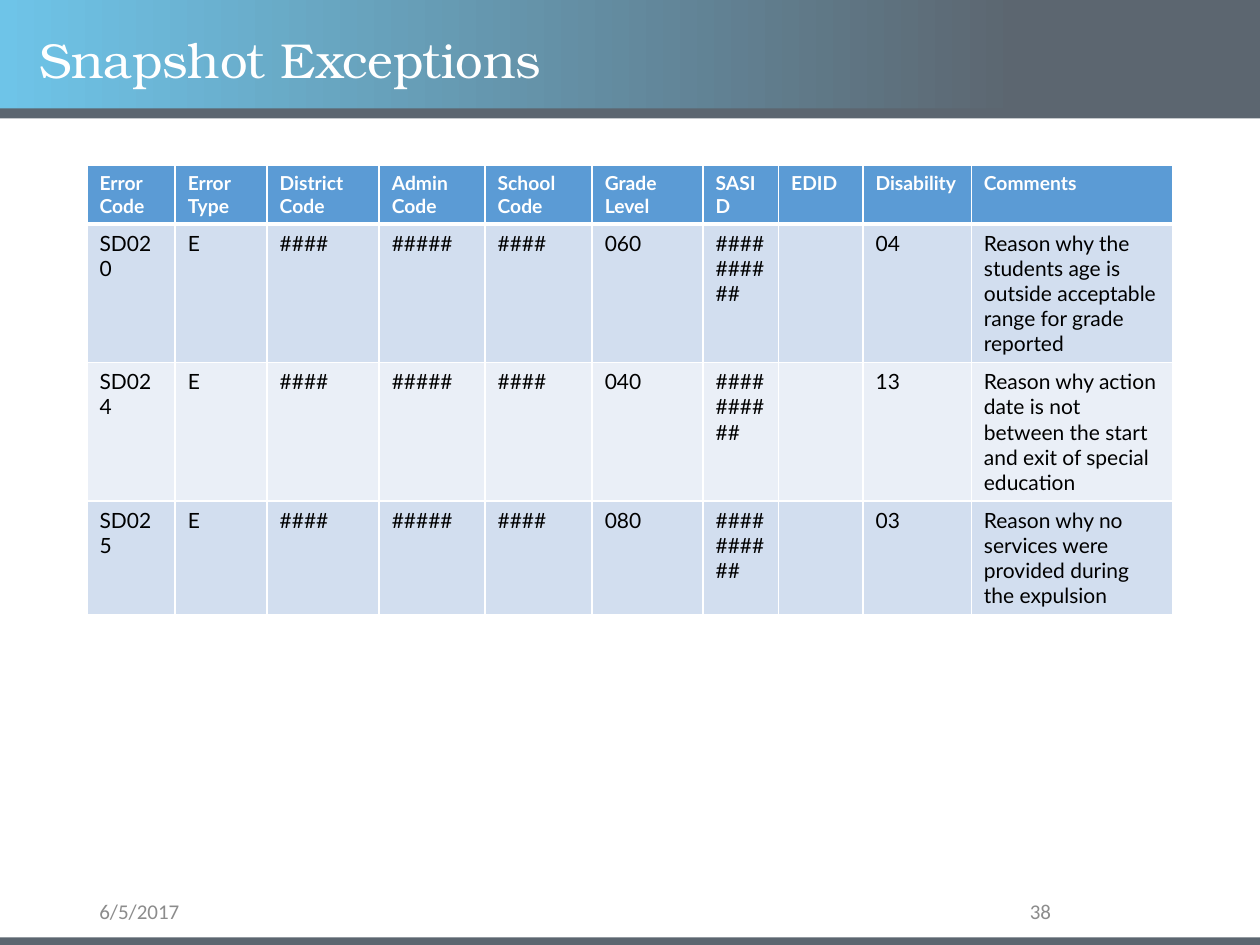
import pptx
import pptx.dml.color
import pptx.enum.shapes
import pptx.enum.text
import pptx.oxml
import pptx.oxml.ns
import pptx.util

Inches = pptx.util.Inches
RGBColor = pptx.dml.color.RGBColor
ALIGN = pptx.enum.text.PP_ALIGN
ANCHOR = pptx.enum.text.MSO_ANCHOR

WHITE = RGBColor(0xFF, 0xFF, 0xFF)
BLACK = RGBColor(0x00, 0x00, 0x00)
SKY = RGBColor(0x6E, 0xC4, 0xE8)
SLATE = RGBColor(0x5C, 0x66, 0x70)
FOOTER_GRAY = RGBColor(0x8C, 0x8C, 0x8C)
HEADER_BLUE = RGBColor(0x5B, 0x9B, 0xD5)
STRIPES = [RGBColor(0xD2, 0xDE, 0xEF), RGBColor(0xEA, 0xEF, 0xF7)]

SLIDE_WIDTH, SLIDE_HEIGHT = 10, 7.5
MARGIN = 0.69

COLUMN_WIDTHS = [0.7, 0.73, 0.89, 0.84, 0.85, 0.88, 0.6, 0.67, 0.86, 1.6]
ROW_HEIGHTS = [0.46, 1.1, 1.1, 0.9]
HEADINGS = ["Error Code", "Error Type", "District Code", "Admin Code", "School Code",
            "Grade Level", "SASID", "EDID", "Disability", "Comments"]
# Error code, grade level, disability, comment
EXCEPTIONS = [
    ("SD020", "060", "04",
     "Reason why the students age is outside acceptable range for grade reported"),
    ("SD024", "040", "13",
     "Reason why action date is not between the start and exit of special education"),
    ("SD025", "080", "03",
     "Reason why no services were provided during the expulsion"),
]


def add_span(para, text, size, font, color, bold=False):
    span = para.add_run()
    span.text = text
    span.font.size = pptx.util.Pt(size)
    span.font.name = font
    span.font.color.rgb = color
    span.font.bold = bold


def add_band(slide, top, height):
    """Add a full-width slate band and return it."""
    band = slide.shapes.add_shape(
        pptx.enum.shapes.MSO_SHAPE.RECTANGLE,
        0, Inches(top), Inches(SLIDE_WIDTH), Inches(height))
    band.shadow.inherit = False
    band.fill.solid()
    band.fill.fore_color.rgb = SLATE
    band.line.fill.background()
    return band


def add_bands(slide):
    banner = add_band(slide, 0, 0.87)
    banner.fill.gradient()
    banner.fill.gradient_angle = 0
    for stop, position, color in zip(banner.fill.gradient_stops, (0, 0.81), (SKY, SLATE)):
        stop.position = position
        stop.color.rgb = color
    add_band(slide, 0.86, 0.08)
    add_band(slide, 7.44, 0.08)


def place_title(slide, left, top, width, height):
    title = slide.shapes.title
    title.left, title.top = Inches(left), Inches(top)
    title.width, title.height = Inches(width), Inches(height)
    title.element.getparent().append(title.element)  # in front of the banner
    frame = title.text_frame
    frame.auto_size = pptx.enum.text.MSO_AUTO_SIZE.NONE
    frame.vertical_anchor = ANCHOR.MIDDLE
    para = frame.paragraphs[0]
    para.alignment = ALIGN.LEFT
    para.line_spacing = 0.9
    add_span(para, "Snapshot Exceptions", 28, "TeX Gyre Bonum", WHITE)


def add_footer_text(slide, text, left, width, alignment):
    box = slide.shapes.add_textbox(Inches(left), Inches(7.12), Inches(width), Inches(0.23))
    box.text_frame.word_wrap = True
    box.text_frame.vertical_anchor = ANCHOR.MIDDLE
    para = box.text_frame.paragraphs[0]
    para.alignment = alignment
    add_span(para, text, 12, "Calibri", FOOTER_GRAY)


def set_borders(cell, top=1, bottom=1):
    """Give a cell white borders, with widths in points."""
    properties = cell._tc.get_or_add_tcPr()
    for side, width in (("L", 1), ("R", 1), ("T", top), ("B", bottom)):
        properties.append(pptx.oxml.parse_xml(
            f'<a:ln{side} {pptx.oxml.ns.nsdecls("a")} w="{pptx.util.Pt(width)}">'
            f'<a:solidFill><a:srgbClr val="{WHITE}"/></a:solidFill></a:ln{side}>'))


def add_exceptions_table(slide, left, top):
    rows = [HEADINGS] + [
        [code, "E", "####", "#####", "####", grade, "##########", "", disability, comment]
        for code, grade, disability, comment in EXCEPTIONS]
    table = slide.shapes.add_table(
        len(rows), len(HEADINGS), Inches(left), Inches(top),
        Inches(sum(COLUMN_WIDTHS)), Inches(sum(ROW_HEIGHTS))).table
    for column, width in zip(table.columns, COLUMN_WIDTHS):
        column.width = Inches(width)
    for index, (row, height, texts) in enumerate(zip(table.rows, ROW_HEIGHTS, rows)):
        row.height = Inches(height)
        header = index == 0
        for cell, text in zip(row.cells, texts):
            set_borders(cell, top=3 if index == 1 else 1, bottom=3 if header else 1)
            cell.fill.solid()
            cell.fill.fore_color.rgb = HEADER_BLUE if header else STRIPES[(index - 1) % 2]
            if text:
                add_span(cell.text_frame.paragraphs[0], text, 11 if header else 12,
                         "Lato", WHITE if header else BLACK, bold=header)


def main():
    deck = pptx.Presentation()
    deck.slide_width, deck.slide_height = Inches(SLIDE_WIDTH), Inches(SLIDE_HEIGHT)
    slide = deck.slides.add_slide(deck.slide_layouts.get_by_name("Title Only"))
    add_bands(slide)
    add_footer_text(slide, "6/5/2017", MARGIN, 2.25, ALIGN.LEFT)
    add_footer_text(slide, "38", 7.06, 1.38, ALIGN.RIGHT)
    add_exceptions_table(slide, MARGIN, 1.31)
    place_title(slide, 0.21, 0.21, 8.62, 0.57)
    deck.save("out.pptx")


if __name__ == "__main__":
    main()
